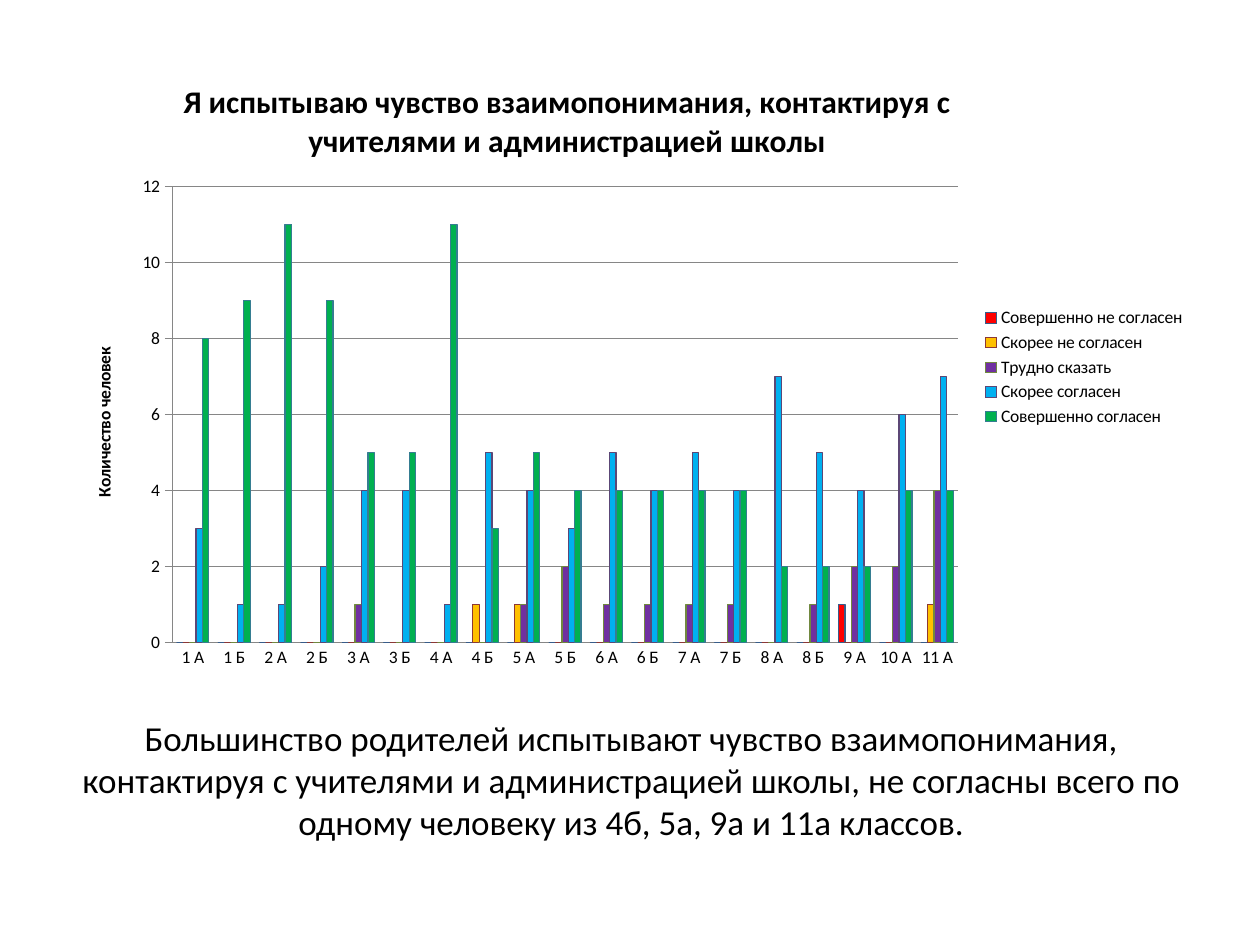
from dataclasses import dataclass

from lxml.etree import SubElement
from pptx import Presentation
from pptx.chart.data import CategoryChartData
from pptx.dml.color import RGBColor
from pptx.enum.chart import XL_CHART_TYPE, XL_LEGEND_POSITION, XL_TICK_MARK
from pptx.enum.text import MSO_ANCHOR, PP_ALIGN
from pptx.oxml.ns import qn
from pptx.util import Cm, Pt

FONT = "Calibri"
COLORS = {
    "text": "000000", "axis": "868686",
    "red": "FF0000", "amber": "FFC000", "purple": "7030A0", "blue": "00B0F0", "green": "00B050",
    "red_edge": "385D8A", "amber_edge": "8C3836", "purple_edge": "71893F",
    "blue_edge": "5C4776", "green_edge": "357D91",
}
CLASSES = [f"{n} {c}" for n in range(1, 9) for c in "АБ"] + ["9 А", "10 А", "11 А"]


@dataclass
class Answer:
    name: str
    color: str
    counts: list[int]


ANSWERS = [
    Answer("Совершенно не согласен", "red", [0] * 16 + [1, 0, 0]),
    Answer("Скорее не согласен", "amber", [0] * 7 + [1, 1] + [0] * 9 + [1]),
    Answer("Трудно сказать", "purple", [0, 0, 0, 0, 1, 0, 0, 0, 1, 2, 1, 1, 1, 1, 0, 1, 2, 2, 4]),
    Answer("Скорее согласен", "blue", [3, 1, 1, 2, 4, 4, 1, 5, 4, 3, 5, 4, 5, 4, 7, 5, 4, 6, 7]),
    Answer("Совершенно согласен", "green", [8, 9, 11, 9, 5, 5, 11, 3, 5, 4, 4, 4, 4, 4, 2, 2, 2, 4, 4]),
]


def rgb(name: str) -> RGBColor:
    return RGBColor.from_string(COLORS[name])


def set_font(font, size: float, bold: bool = False) -> None:
    font.name, font.size, font.bold = FONT, Pt(size), bold
    font.color.rgb = rgb("text")


def write(tf, text: str, *, size: float, bold: bool = False) -> None:
    p = tf.paragraphs[0]
    p.alignment = PP_ALIGN.CENTER
    r = p.add_run()
    r.text = text
    set_font(r.font, size, bold)


def place(parent, index: int, **values) -> None:
    """Give a chart part a manual layout in fractions of the chart."""
    for old in parent.findall(qn("c:layout")):
        parent.remove(old)
    layout = SubElement(parent, qn("c:layout"))
    parent.insert(index, layout)
    manual = SubElement(layout, qn("c:manualLayout"))
    for tag, value in values.items():
        SubElement(manual, qn(f"c:{tag}")).set("val", str(value))


def add_answers_chart(s) -> None:
    data = CategoryChartData(number_format="General")
    data.categories = CLASSES
    for answer in ANSWERS:
        data.add_series(answer.name, answer.counts)
    chart = s.shapes.add_chart(XL_CHART_TYPE.COLUMN_CLUSTERED, Cm(1.3), Cm(1.12),
                               Cm(22.86), Cm(12.57), data).chart
    set_font(chart.font, 10)

    chart.has_title = True
    write(chart.chart_title.text_frame,
          "Я испытываю чувство взаимопонимания, контактируя с учителями и администрацией школы",
          size=18, bold=True)
    place(chart.chart_title.element, 1, xMode="edge", yMode="edge", x=0.1, y=0.03)
    place(chart.element.find(f".//{qn('c:plotArea')}"), 0, layoutTarget="inner",
          xMode="edge", yMode="edge", x=0.095, y=0.21, w=0.693, h=0.732)

    chart.has_legend = True
    chart.legend.position = XL_LEGEND_POSITION.RIGHT
    chart.legend.include_in_layout = False

    cat, val = chart.category_axis, chart.value_axis
    cat.major_tick_mark = XL_TICK_MARK.NONE
    val.major_tick_mark = XL_TICK_MARK.OUTSIDE
    val.minimum_scale, val.maximum_scale, val.major_unit = 0, 12, 2
    val.has_major_gridlines = True
    for line in (cat.format.line, val.format.line, val.major_gridlines.format.line):
        line.color.rgb = rgb("axis")
        line.width = Pt(0.75)
    write(val.axis_title.text_frame, "Количество человек", size=10, bold=True)

    plot = chart.plots[0]
    plot.gap_width, plot.overlap, plot.vary_by_categories = 150, 0, False
    for series, answer in zip(plot.series, ANSWERS):
        series.invert_if_negative = False
        series.format.fill.solid()
        series.format.fill.fore_color.rgb = rgb(answer.color)
        series.format.line.color.rgb = rgb(f"{answer.color}_edge")
        series.format.line.width = Pt(0.75)


def add_conclusion(s) -> None:
    sp = s.shapes.add_textbox(Cm(1.3), Cm(14.12), Cm(22.86), Cm(3.18))
    tf = sp.text_frame
    tf.word_wrap = True
    tf.vertical_anchor = MSO_ANCHOR.MIDDLE
    write(tf, "Большинство родителей испытывают чувство взаимопонимания, контактируя с учителями "
              "и администрацией школы, не согласны всего по одному человеку "
              "из 4б, 5а, 9а и 11а классов.", size=20)


def main() -> None:
    prs = Presentation()
    prs.slide_width, prs.slide_height = Cm(25.4), Cm(19.05)
    s = prs.slides.add_slide(prs.slide_layouts[6])
    add_conclusion(s)
    add_answers_chart(s)
    prs.save("out.pptx")


if __name__ == "__main__":
    main()
